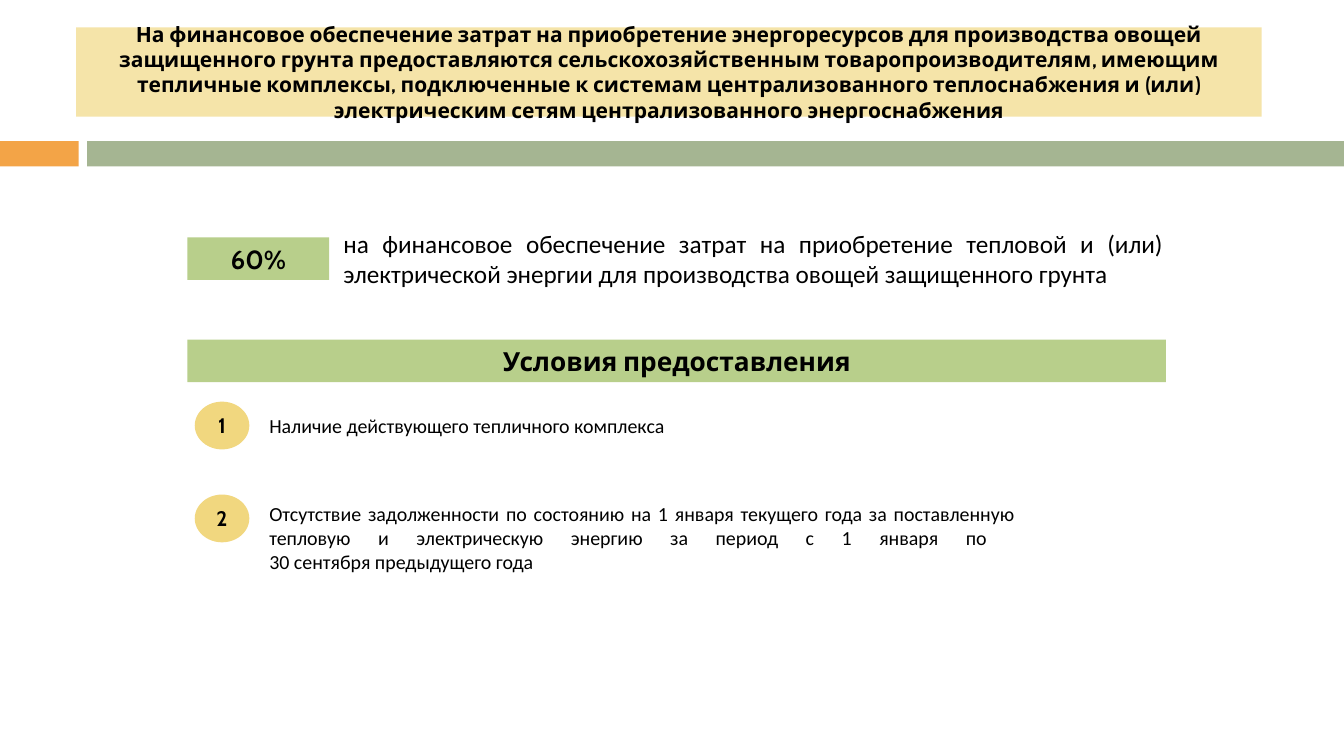
from dataclasses import dataclass

from pptx import Presentation
from pptx.dml.color import RGBColor
from pptx.enum import shapes, text
from pptx.util import Pt


@dataclass(frozen=True)
class Theme:
    orange: str = "F3A447"
    sage: str = "A5B592"
    cream: str = "F5E4A9"
    green: str = "B8CF8B"
    yellow: str = "F1D77F"
    ink: str = "000000"
    heading_font: str = "Cabin"
    body_font: str = "Calibri"
    title_size: int = 20
    label_size: int = 25
    number_size: int = 20
    lead_size: int = 24
    item_size: int = 19


THEME = Theme()
RECT = shapes.MSO_SHAPE.RECTANGLE
OVAL = shapes.MSO_SHAPE.OVAL
CENTER = text.PP_ALIGN.CENTER
JUSTIFY = text.PP_ALIGN.JUSTIFY

TITLE = (
    "На финансовое обеспечение затрат на приобретение энергоресурсов для "
    "производства овощей защищенного грунта предоставляются "
    "сельскохозяйственным товаропроизводителям, имеющим тепличные комплексы, "
    "подключенные к системам централизованного теплоснабжения и (или) "
    "электрическим сетям централизованного энергоснабжения"
)
LEAD = (
    "на финансовое обеспечение затрат на приобретение тепловой и (или) "
    "электрической энергии для производства овощей защищенного грунта"
)
# Each condition: circle top, text top, text height, wording
CONDITIONS = [
    (382.5, 387.5, 36, "Наличие действующего тепличного комплекса"),
    (471, 471, 82,
     "Отсутствие задолженности по состоянию на 1 января текущего года за "
     "поставленную тепловую и электрическую энергию за период с 1 января по \n"
     "30 сентября предыдущего года"),
]


def points(*lengths):
    return [Pt(n) for n in lengths]


def set_fill(s, color):
    s.fill.solid()
    s.fill.fore_color.rgb = RGBColor.from_string(color)


def write(s, words, size, font, align, bold=False, wrap=True):
    """Put one formatted paragraph into a shape; a newline is a line break."""
    tf = s.text_frame
    tf.word_wrap = wrap
    tf.auto_size = text.MSO_AUTO_SIZE.NONE
    tf.margin_left = tf.margin_right = Pt(13)
    tf.margin_top = tf.margin_bottom = Pt(6.5)
    p = tf.paragraphs[0]
    p.text = words
    p.alignment = align
    for r in p.runs:
        r.font.size = Pt(size)
        r.font.name = font
        r.font.bold = bold
        r.font.color.rgb = RGBColor.from_string(THEME.ink)


def add_block(slide, kind, box, color):
    s = slide.shapes.add_shape(kind, *points(*box))
    s.shadow.inherit = False
    s.line.fill.background()
    set_fill(s, color)
    return s


def add_label(slide, kind, box, color, words, size):
    s = add_block(slide, kind, box, color)
    s.text_frame.vertical_anchor = text.MSO_ANCHOR.MIDDLE
    write(s, words, size, THEME.heading_font, CENTER, bold=True,
          wrap=kind != OVAL)


def add_body(slide, box, words, size):
    s = slide.shapes.add_textbox(*points(*box))
    write(s, words, size, THEME.body_font, JUSTIFY)


def set_title(slide, box, words):
    s = slide.shapes.title
    s.left, s.top, s.width, s.height = points(*box)
    set_fill(s, THEME.cream)
    s.text_frame.vertical_anchor = text.MSO_ANCHOR.MIDDLE
    write(s, words, THEME.title_size, THEME.heading_font, CENTER, bold=True)


def main():
    prs = Presentation()
    prs.slide_width, prs.slide_height = points(1280, 720)
    slide = prs.slides.add_slide(prs.slide_layouts[5])

    add_block(slide, RECT, (0, 134.5, 75, 24), THEME.orange)
    add_block(slide, RECT, (83, 134.5, 1197, 24), THEME.sage)
    set_title(slide, (72.5, 26, 1129, 85), TITLE)

    left, label_height = 178.5, 40.5
    add_body(slide, (314, 211, 807, 71), LEAD, THEME.lead_size)
    add_label(slide, RECT, (left, 226, 135, label_height), THEME.green,
              "60%", THEME.label_size)
    add_label(slide, RECT, (left, 323.5, 932, label_height), THEME.green,
              "Условия предоставления", THEME.label_size)

    for number, (circle_top, top, height, words) in enumerate(CONDITIONS, 1):
        add_label(slide, OVAL, (185.5, circle_top, 52, 45.5), THEME.yellow,
                  str(number), THEME.number_size)
        add_body(slide, (243.5, top, 736, height), words, THEME.item_size)

    prs.save("out.pptx")


if __name__ == "__main__":
    main()
